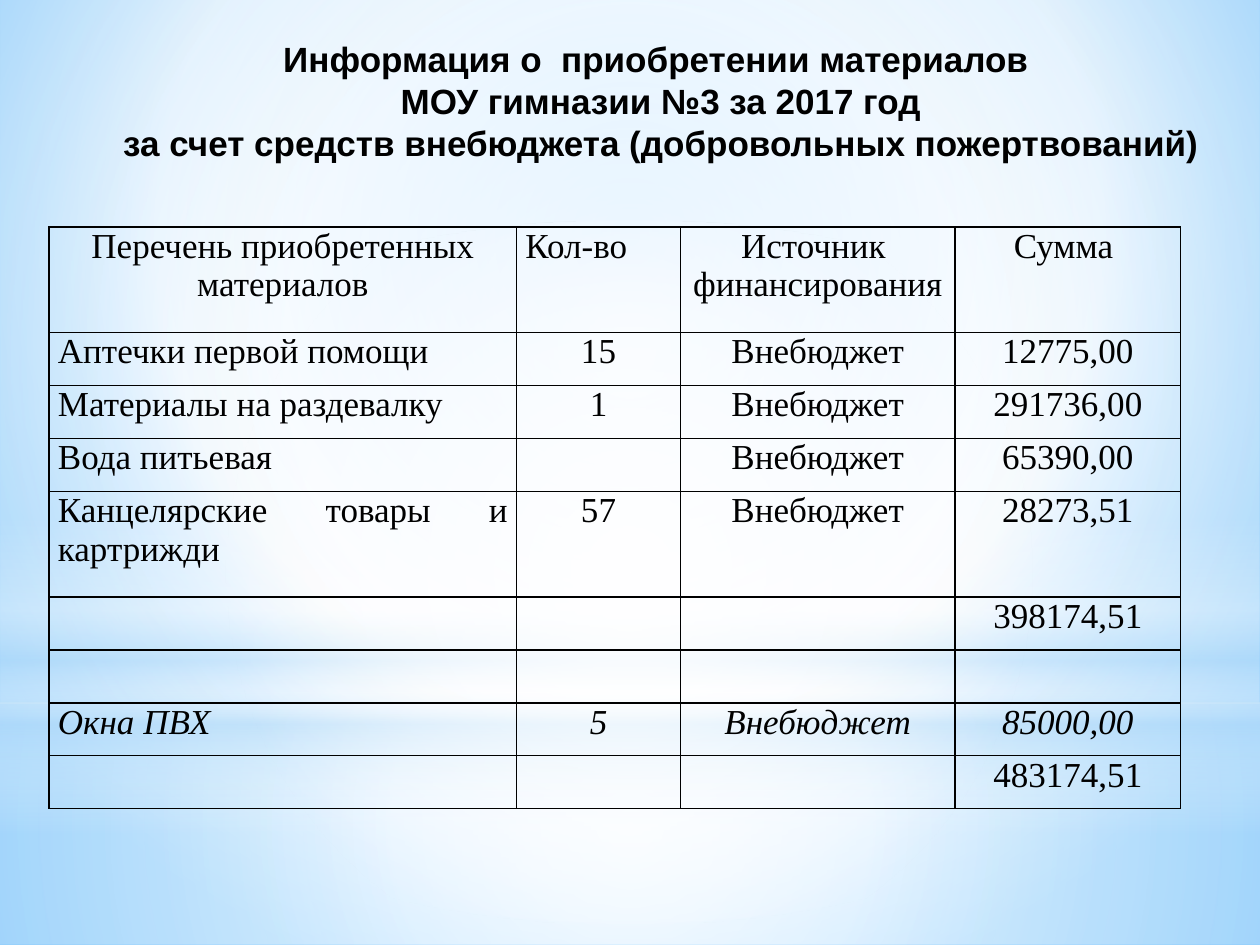
from lxml.etree import SubElement
from pptx import Presentation
from pptx.dml.color import RGBColor
from pptx.enum.shapes import MSO_SHAPE
from pptx.enum.text import MSO_ANCHOR, MSO_AUTO_SIZE, PP_ALIGN
from pptx.oxml.ns import qn
from pptx.util import Inches, Pt

WIDTH, HEIGHT = 10, 7.5
BLACK = "000000"
CENTER = (50, 50, 50, 50)

BACKGROUND_STOPS = [(0, "9ED5FF", 100), (60, "FFFFFF", 100), (100, "5BB9FF", 100)]
# Preset, box, gradient stops (position, colour, opacity), focus of the glow
GLOWS = [
    (MSO_SHAPE.RECTANGLE, (0, 5.58, WIDTH, 1.92),
     [(0, "FFFFFF", 91), (37, "FFFFFF", 76), (100, "B4DCFA", 79)], CENTER),
    (MSO_SHAPE.RECTANGLE, (0, 0, WIDTH, 5.58),
     [(0, "FFFFFF", 89), (48, "FFFFFF", 62), (100, "B4DCFA", 79)], CENTER),
    (MSO_SHAPE.RECTANGLE, (0, 4.12, WIDTH, 2.5),
     [(0, "FFFFFF", 0), (29, "FFFFFF", 30), (45, "B4DCFA", 40),
      (55, "FFFFFF", 26), (65, "B4DCFA", 60), (100, "FFFFFF", 0)], None),
    (MSO_SHAPE.OVAL, (0, 1.75, WIDTH, 5.58),
     [(0, "FFFFFF", 100), (56, "FFFFFF", 0)], CENTER),
]

TITLE_LINES = [
    "Информация о  приобретении материалов ",
    "МОУ гимназии №3 за 2017 год",
    "за счет средств внебюджета (добровольных пожертвований)",
]

HEADER = ["Перечень приобретенных\nматериалов", "Кол-во",
          "Источник \nфинансирования", "Сумма "]
SOURCE = "Внебюджет"
ROWS = [
    HEADER,
    ["Аптечки первой помощи", "15", SOURCE, "12775,00"],
    ["Материалы на раздевалку", "1", SOURCE, "291736,00"],
    ["Вода питьевая", "", SOURCE, "65390,00"],
    ["Канцелярские товары и картрижди", "57", SOURCE, "28273,51"],
    ["", "", "", "398174,51"],
    ["", "", "", ""],
    ["Окна ПВХ ", "5", SOURCE, "85000,00"],
    ["", "", "", "483174,51"],
]
COLUMN_WIDTHS = [3.71, 1.3, 2.18, 1.79]
ROW_HEIGHT = 0.42
DOUBLE_ROWS = {0, 4}
ITALIC_ROW = 7


def color(hex_code):
    return RGBColor.from_string(hex_code)


def set_gradient(fill, properties, stops, focus):
    """Give a gradient with transparent stops: round a focus, or downwards."""
    fill.gradient()
    gradient = properties.find(qn("a:gradFill"))
    for child in list(gradient):
        gradient.remove(child)
    stop_list = SubElement(gradient, qn("a:gsLst"))
    for position, hex_code, opacity in stops:
        stop = SubElement(stop_list, qn("a:gs"), pos=str(position * 1000))
        stop_color = SubElement(stop, qn("a:srgbClr"), val=hex_code)
        if opacity < 100:
            SubElement(stop_color, qn("a:alpha"), val=str(opacity * 1000))
    if focus:
        shade = SubElement(gradient, qn("a:path"), {"path": "circle"})
        sides = {side: str(share * 1000) for side, share in zip("ltrb", focus)}
        SubElement(shade, qn("a:fillToRect"), sides)
    else:
        SubElement(gradient, qn("a:lin"), ang="5400000", scaled="0")


def add_backdrop(slide):
    fill = slide.background.fill
    fill.gradient()
    properties = slide.element.find(".//" + qn("p:bgPr"))
    set_gradient(fill, properties, BACKGROUND_STOPS, (20, 10, 20, 60))
    for preset, box, stops, focus in GLOWS:
        glow = slide.shapes.add_shape(preset, *map(Inches, box))
        glow.shadow.inherit = False
        glow.line.fill.background()
        set_gradient(glow.fill, glow.element.spPr, stops, focus)


def set_font(paragraph, name, bold=False, italic=False):
    font = paragraph.font
    font.name, font.size = name, Pt(20)
    font.bold, font.italic = bold, italic
    font.color.rgb = color(BLACK)


def place_title(slide, left, top, width, height):
    title = slide.shapes.title
    title.left, title.top, title.width, title.height = map(
        Inches, (left, top, width, height))
    title.element.getparent().append(title.element)  # in front of the glows
    frame = title.text_frame
    frame.word_wrap = True
    frame.auto_size = MSO_AUTO_SIZE.NONE
    frame.vertical_anchor = MSO_ANCHOR.MIDDLE
    frame.margin_bottom = Inches(0.43)
    frame.text = "\n".join(TITLE_LINES)
    for paragraph in frame.paragraphs:
        paragraph.alignment = PP_ALIGN.CENTER
        set_font(paragraph, "Arial", bold=True)
        indent = paragraph._p.get_or_add_pPr()
        indent.set("marL", "0")
        indent.set("indent", str(Inches(0.49)))


def set_borders(cell):
    properties = cell._tc.get_or_add_tcPr()
    for position, side in enumerate(("a:lnL", "a:lnR", "a:lnT", "a:lnB")):
        line = SubElement(properties, qn(side), w=str(Pt(1)))
        fill = SubElement(line, qn("a:solidFill"))
        SubElement(fill, qn("a:srgbClr"), val=BLACK)
        properties.insert(position, line)


def cell_alignment(row, column):
    if (row, column) in {(0, 1), (1, 0)}:
        return PP_ALIGN.LEFT
    return PP_ALIGN.JUSTIFY if row and column == 0 else PP_ALIGN.CENTER


def fill_cell(cell, text, row, column):
    cell.fill.background()
    set_borders(cell)
    cell.margin_left = cell.margin_right = Inches(0.07)
    cell.margin_top = cell.margin_bottom = 0
    cell.text = text
    for paragraph in cell.text_frame.paragraphs:
        paragraph.alignment = cell_alignment(row, column)
        set_font(paragraph, "Times New Roman", italic=row == ITALIC_ROW)


def add_purchases(slide, left, top):
    heights = [ROW_HEIGHT * (2 if row in DOUBLE_ROWS else 1)
               for row in range(len(ROWS))]
    box = (left, top, sum(COLUMN_WIDTHS), sum(heights))
    table = slide.shapes.add_table(
        len(ROWS), len(COLUMN_WIDTHS), *map(Inches, box)).table
    table.first_row = table.horz_banding = False
    for column, width in zip(table.columns, COLUMN_WIDTHS):
        column.width = Inches(width)
    for row, (texts, height) in enumerate(zip(ROWS, heights)):
        table.rows[row].height = Inches(height)
        for column, text in enumerate(texts):
            fill_cell(table.cell(row, column), text, row, column)


def main():
    presentation = Presentation()
    presentation.slide_width = Inches(WIDTH)
    presentation.slide_height = Inches(HEIGHT)
    slide = presentation.slides.add_slide(presentation.slide_layouts[5])
    add_backdrop(slide)
    add_purchases(slide, 0.39, 1.8)
    place_title(slide, 0, 0.23, WIDTH, 1.51)
    presentation.save("out.pptx")


if __name__ == "__main__":
    main()
